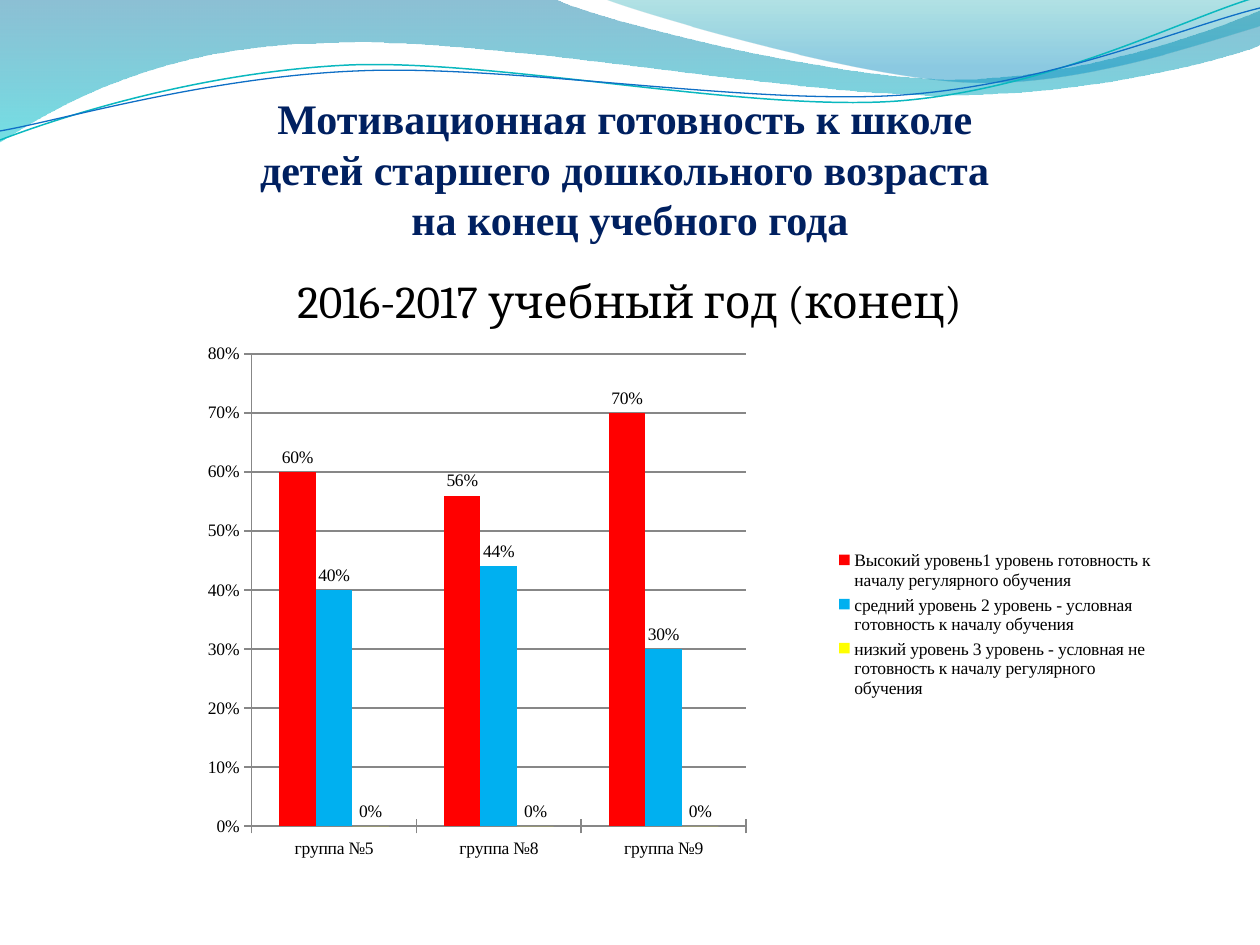
from copy import deepcopy

from lxml.etree import SubElement
from pptx import Presentation
from pptx.chart.data import CategoryChartData as Data
from pptx.dml.color import RGBColor as RGB
from pptx.enum.chart import XL_CHART_TYPE as Kind, XL_LABEL_POSITION as Spot
from pptx.enum.chart import XL_LEGEND_POSITION as Side, XL_TICK_MARK as Tick
from pptx.enum.text import MSO_ANCHOR as Anchor, MSO_AUTO_SIZE as Auto, PP_ALIGN as Align
from pptx.oxml.ns import qn
from pptx.util import Pt

PX = 9144000 // 1260
SERIF = "Times New Roman"
HEX = {
    "navy": "002060", "black": "000000", "white": "FFFFFF",
    "red": "FF0000", "blue": "00B0F0", "yellow": "FFFF00",
    "steel": "0074A1", "aqua": "00C6CF", "teal": "00A1A9", "sky": "008BBF",
    "mint": "0AB8BF", "royal": "0F6FC6",
}

# Each step holds one point (a straight side) or three (a Bezier curve)
CREST = [
    [(0, 0)], [(554, -1)],
    [(600, 21), (837, 79), (955, 79)], [(1075, 79), (1207, 33), (1260, 11)],
    [(1261, 45)],
    [(1239, 55), (1096, 96), (940, 95)], [(784, 95), (481, 35), (324, 43)],
    [(163, 45), (58, 105), (-1, 142)],
]
SAIL = [
    [(604, -1)],
    [(641, 14), (859, 78), (969, 82)], [(1079, 87), (1211, 40), (1260, 26)],
    [(1260, 0)],
]
UPPER = [
    [(0, 140)], [(60, 117), (199, 72), (349, 65)],
    [(498, 59), (747, 112), (898, 101)], [(1050, 89), (1182, 19), (1257, -3)],
]
LOWER = [
    [(0, 131)], [(59, 121), (207, 77), (357, 71)],
    [(508, 64), (752, 106), (903, 95)], [(1053, 84), (1186, 26), (1260, 8)],
]


def rgb(name):
    return RGB.from_string(HEX[name])


def place(shape, box):
    shape.left, shape.top, shape.width, shape.height = (n * PX for n in box)


def style(font, size=10, face=SERIF, color="black", bold=False):
    font.size, font.name, font.bold = Pt(size), face, bold
    font.color.rgb = rgb(color)


def write(frame, text, anchor=Anchor.TOP, **look):
    frame.word_wrap, frame.auto_size = True, Auto.NONE
    frame.vertical_anchor = anchor
    para = frame.paragraphs[0]
    para.text, para.alignment = text, Align.CENTER
    for run in para.runs:
        style(run.font, **look)
    # Line breaks take the format of the text around them
    for gap in para._p.findall(qn("a:br")):
        gap.append(deepcopy(para.runs[0].font._element))


def curve(slide, steps, closed):
    ends = [(x * PX, y * PX) for x, y in (step[-1] for step in steps)]
    draft = slide.shapes.build_freeform(*ends[0], scale=1.0)
    draft.add_line_segments(ends[1:], close=closed)
    shape = draft.convert_to_shape()
    shape.shadow.inherit = False
    # Bend the sides that have control points
    sides = list(shape._element.iter(qn("a:lnTo")))
    for side, step in zip(sides, steps[1:]):
        if len(step) == 3:
            bend = SubElement(side.getparent(), qn("a:cubicBezTo"))
            side.getparent().replace(side, bend)
            for x, y in step:
                dot = SubElement(bend, qn("a:pt"))
                dot.set("x", str(x * PX - shape.left))
                dot.set("y", str(y * PX - shape.top))
    return shape


def wave(slide, steps, stops):
    shape = curve(slide, steps, True)
    shape.line.fill.background()
    shape.fill.gradient()
    shape.fill.gradient_angle = 270
    for stop, (pos, color, alpha) in zip(shape.fill.gradient_stops, stops):
        stop.position, stop.color.rgb = pos, rgb(color)
        tint = stop._gs.find(qn("a:srgbClr"))
        SubElement(tint, qn("a:alpha")).set("val", str(alpha * 1000))


def strand(slide, steps, color, width):
    shape = curve(slide, steps, False)
    shape.fill.background()
    shape.line.color.rgb, shape.line.width = rgb(color), Pt(width)


def banner(slide):
    wave(slide, CREST, [(0, "steel", 45), (1, "aqua", 55)])
    wave(slide, SAIL, [(0, "teal", 30), (0.8, "sky", 45)])
    strand(slide, UPPER, "mint", 0.85)
    strand(slide, LOWER, "royal", 0.75)


def heading(slide, box):
    title = slide.shapes.title
    place(title, box)
    frame = title.text_frame
    frame.margin_left = frame.margin_right = frame.margin_bottom = 0
    write(frame, "Мотивационная готовность к школе \n"
          "детей старшего дошкольного возраста \nна конец учебного года",
          Anchor.BOTTOM, size=24, color="navy", bold=True)


def caption(slide, box):
    text = slide.shapes.add_textbox(*(n * PX for n in box))
    write(text.text_frame, "2016-2017 учебный год (конец)", size=26, face="Cambria")


def layout(node, before, inner=False, **spot):
    """Fix a chart part at fractions of the chart's size."""
    for old in node.findall(qn("c:layout")):
        node.remove(old)
    outer = SubElement(node, qn("c:layout"))
    before.addprevious(outer)
    hand = SubElement(outer, qn("c:manualLayout"))
    rules = {"layoutTarget": "inner"} if inner else {}
    rules |= {"xMode": "edge", "yMode": "edge"} | spot
    for key, val in rules.items():
        SubElement(hand, qn("c:" + key)).set("val", str(val))


def levels(slide, box):
    rows = [
        ("Высокий уровень1 уровень готовность к началу регулярного обучения",
         (0.6, 0.56, 0.7), "red"),
        ("средний уровень 2 уровень - условная готовность к началу обучения",
         (0.4, 0.44, 0.3), "blue"),
        ("низкий уровень 3 уровень - условная не готовность к началу регулярного обучения",
         (0, 0, 0), "yellow"),
    ]
    data = Data(number_format="0%")
    data.categories = [f"группа №{n}" for n in (5, 8, 9)]
    for name, vals, _ in rows:
        data.add_series(name, vals)
    chart = slide.shapes.add_chart(
        Kind.COLUMN_CLUSTERED, *(n * PX for n in box), data).chart
    style(chart.font)
    chart.has_title = False

    # Columns and their labels
    plot = chart.plots[0]
    plot.gap_width, plot.overlap, plot.vary_by_categories = 150, 0, False
    for row, (_, _, color) in zip(plot.series, rows):
        row.format.fill.solid()
        row.format.fill.fore_color.rgb = rgb(color)
        tags = row.data_labels
        tags.show_value, tags.position = True, Spot.OUTSIDE_END
        tags.number_format, tags.number_format_is_linked = "0%", False

    # Axes
    scale = chart.value_axis
    scale.has_major_gridlines = True
    scale.tick_labels.number_format = "0%"
    scale.tick_labels.number_format_is_linked = False
    for axis in (chart.category_axis, scale):
        axis.major_tick_mark = Tick.CROSS

    # Legend and plot area
    chart.has_legend = True
    key = chart.legend
    key.position, key.include_in_layout = Side.RIGHT, False
    layout(key._element, key._element.find(qn("c:overlay")),
           x=0.68, y=0.36, w=0.31, h=0.28)
    area = chart._chartSpace.find(".//" + qn("c:plotArea"))
    layout(area, area.find(qn("c:barChart")), True, x=0.115, y=0.018, w=0.479, h=0.84)


def main():
    deck = Presentation()
    deck.slide_width, deck.slide_height = 1260 * PX, 945 * PX
    slide = deck.slides.add_slide(deck.slide_layouts[5])
    slide.background.fill.solid()
    slide.background.fill.fore_color.rgb = rgb("white")
    banner(slide)
    caption(slide, (63, 267, 1134, 605))
    heading(slide, (63, 97, 1134, 147))
    levels(slide, (133, 344, 1032, 562))
    deck.save("out.pptx")


if __name__ == "__main__":
    main()
